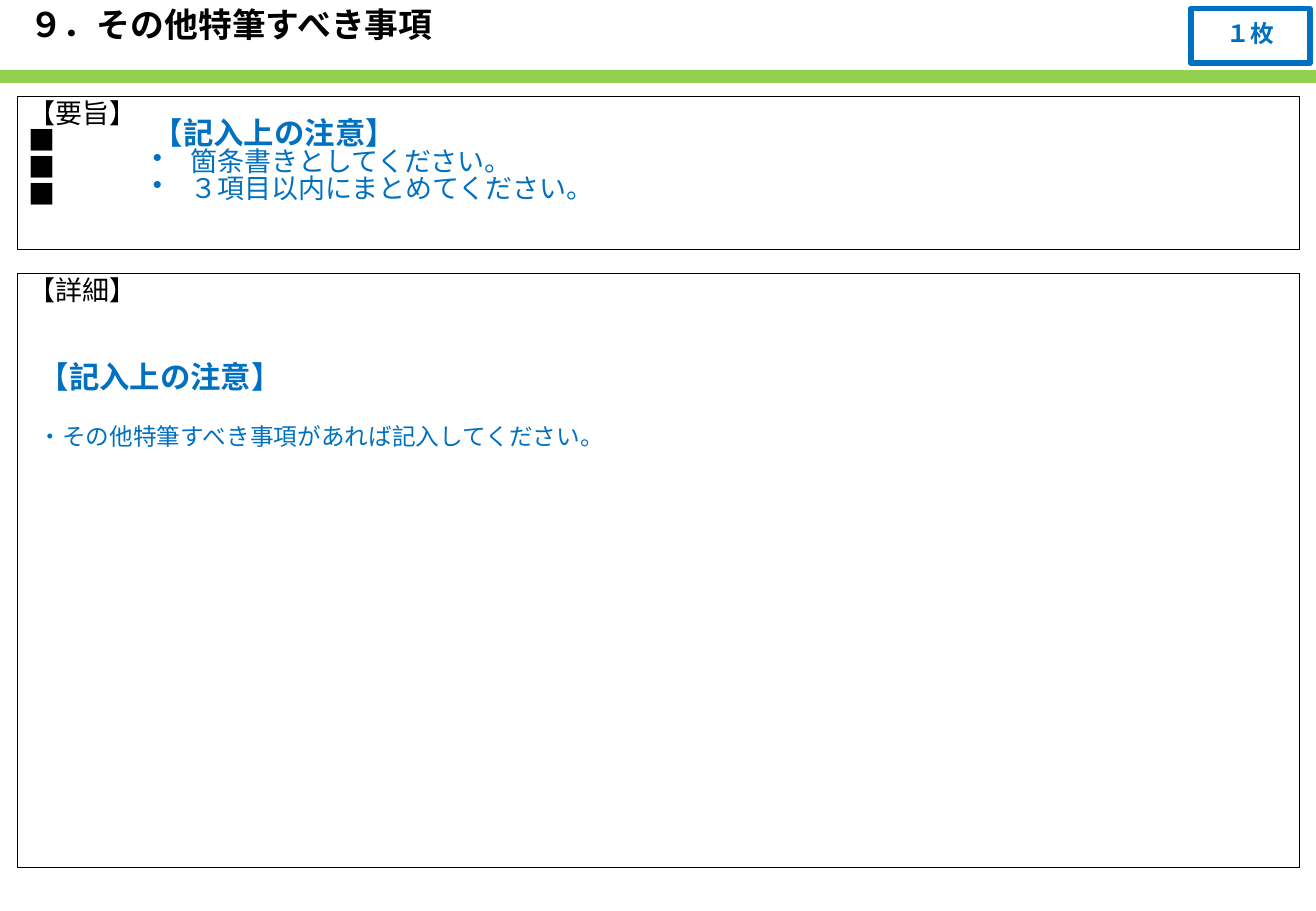
from pptx import Presentation
from pptx.dml.color import RGBColor
from pptx.enum.shapes import MSO_SHAPE
from pptx.enum.text import MSO_ANCHOR as Anchor, PP_ALIGN as Align
from pptx.oxml.ns import qn
from pptx.util import Pt
from lxml.etree import SubElement

EMU_PER_PX = 9144
FONT = "Noto Sans CJK JP"
LINE_SPACING = 0.83
BLACK = RGBColor(0x00, 0x00, 0x00)
WHITE = RGBColor(0xFF, 0xFF, 0xFF)
GREEN = RGBColor(0x92, 0xD0, 0x50)
BLUE = RGBColor(0x00, 0x70, 0xC0)


def px(*lengths):
    return [length * EMU_PER_PX for length in lengths]


def write(frame, lines, color, anchor=Anchor.TOP, align=Align.LEFT):
    frame.word_wrap = True
    frame.vertical_anchor = anchor
    for index, (text, size, bold) in enumerate(lines):
        paragraph = frame.add_paragraph() if index else frame.paragraphs[0]
        paragraph.alignment = align
        paragraph.line_spacing = LINE_SPACING
        run = paragraph.add_run()
        run.text = text
        font = paragraph.font
        font.name, font.size, font.bold = FONT, Pt(size), bold
        font.color.rgb = color
        SubElement(font._element, qn("a:ea"), typeface=FONT)
    return frame.paragraphs


def add_bullet(paragraph, indent):
    properties = paragraph._p.get_or_add_pPr()
    properties.set("marL", str(indent))
    properties.set("indent", str(-indent))
    bullet = properties.makeelement(qn("a:buChar"), {"char": "•"})
    properties.find(qn("a:defRPr")).addprevious(bullet)


def add_box(slide, bounds, fill, line, width):
    box = slide.shapes.add_shape(MSO_SHAPE.RECTANGLE, *px(*bounds))
    box.shadow.inherit = False
    box.fill.solid()
    box.fill.fore_color.rgb = fill
    box.line.color.rgb = line
    box.line.width = Pt(width)
    return box.text_frame


def add_note(slide, bounds, lines):
    note = slide.shapes.add_textbox(*px(*bounds))
    return write(note.text_frame, [("【記入上の注意】", 18, True)] + lines, BLUE)


def set_title(slide, bounds, text):
    title = slide.shapes.title
    title.left, title.top, title.width, title.height = px(*bounds)
    write(title.text_frame, [(text, 20, True)], BLACK)


def main():
    deck = Presentation()
    deck.slide_width, deck.slide_height = px(1083, 750)
    slide = deck.slides.add_slide(deck.slide_layouts[5])

    add_box(slide, (-1, 59, 1084, 8), GREEN, GREEN, 2)
    set_title(slide, (14, 4, 975, 55), "９．その他特筆すべき事項")

    details = add_box(slide, (14, 225, 1055, 489), WHITE, BLACK, 0.25)
    write(details, [("【詳細】", 16, False)], BLACK)
    page_count = add_box(slide, (980, 7, 98, 45), WHITE, BLUE, 3.5)
    write(page_count, [("１枚", 14, True)], BLUE, Anchor.MIDDLE, Align.CENTER)
    summary = add_box(slide, (14, 79, 1055, 126), WHITE, BLACK, 0.25)
    write(summary, [(text, 16, False) for text in ["【要旨】"] + ["■"] * 3], BLACK)

    summary_note = add_note(slide, (116, 94, 433, 98), [
        ("箇条書きとしてください。", 16, False),
        ("３項目以内にまとめてください。", 16, False),
    ])
    [indent] = px(31)
    for item in summary_note[1:]:
        add_bullet(item, indent)

    details_note = add_note(slide, (22, 295, 1000, 395), [
        ("・その他特筆すべき事項があれば記入してください。", 14, False),
    ])
    details_note[1].space_before = Pt(19)

    deck.save("out.pptx")


if __name__ == "__main__":
    main()
